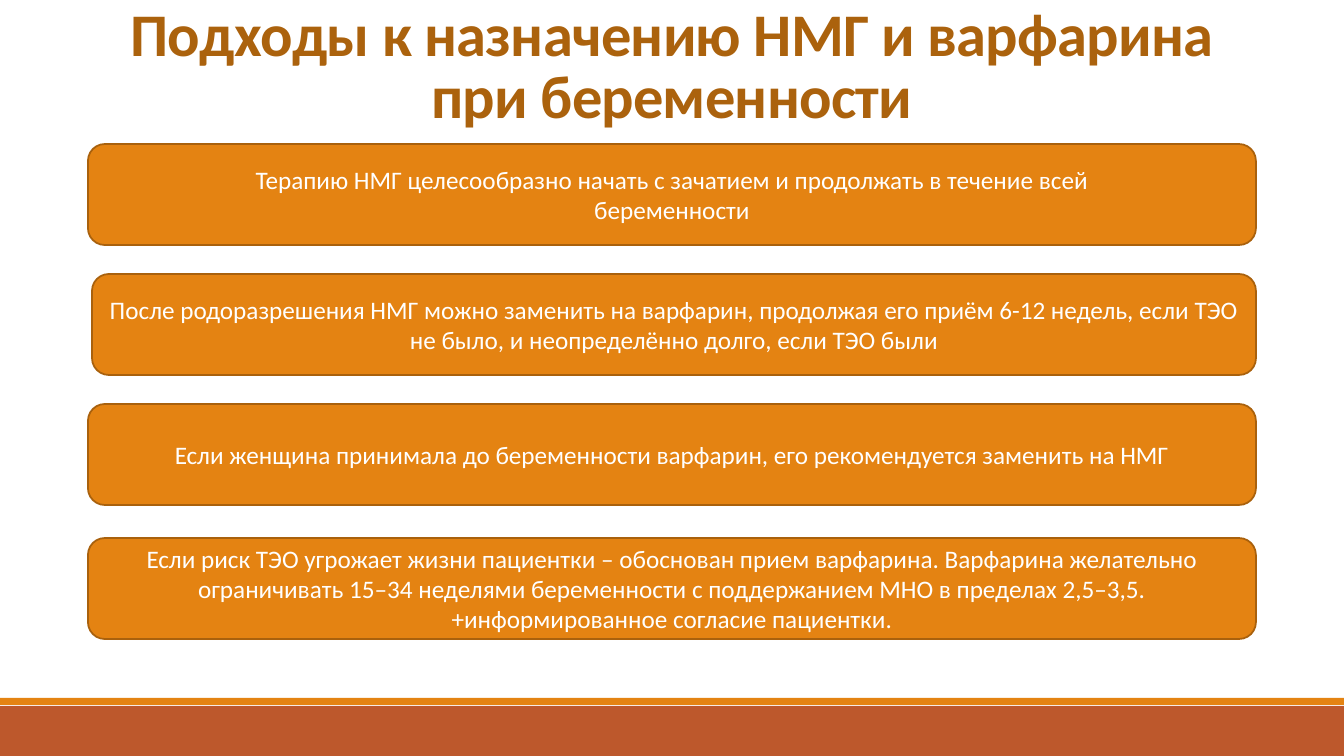
from dataclasses import dataclass

from pptx import Presentation
from pptx.dml.color import RGBColor
from pptx.enum.shapes import MSO_SHAPE
from pptx.enum.text import MSO_ANCHOR, PP_ALIGN
from pptx.util import Pt

RECT, ROUND = MSO_SHAPE.RECTANGLE, MSO_SHAPE.ROUNDED_RECTANGLE
MIDDLE, BOTTOM = MSO_ANCHOR.MIDDLE, MSO_ANCHOR.BOTTOM
CENTER = PP_ALIGN.CENTER

TITLE = "Подходы к назначению НМГ и варфарина при беременности"

# left, top, paragraphs
CARDS = [
    (88, 144, ["Терапию НМГ целесообразно начать с зачатием и продолжать в течение всей",
               "беременности"]),
    (92, 274, ["После родоразрешения НМГ можно заменить на варфарин, продолжая его приём "
               "6-12 недель, если ТЭО не было, и неопределённо долго, если ТЭО были"]),
    (88, 404, ["Если женщина принимала до беременности варфарин, его рекомендуется "
               "заменить на НМГ"]),
    (88, 538, ["Если риск ТЭО угрожает жизни пациентки – обоснован прием варфарина. "
               "Варфарина желательно ограничивать 15–34 неделями беременности с "
               "поддержанием МНО в пределах 2,5–3,5. +информированное согласие пациентки."]),
]

WIDE, HIGH = 1344, 756
RIGHT, CARD_H = 1256, 101
BAND_TOP, STRIP_TOP, STRIP_H = 706, 698, 7


@dataclass(frozen=True)
class Theme:
    font: str = "Calibri"
    title: str = "AB620D"
    text: str = "FFFFFF"
    card: str = "E48312"
    edge: str = "A9610D"
    band: str = "BD582C"
    title_pt: float = 43.2
    text_pt: float = 18
    edge_pt: float = 1.25


THEME = Theme()


def px(*vals):
    """Turn pixels into EMU at 100.8 px to the inch."""
    return [round(v * 914400 / 100.8) for v in vals]


def write(shape, lines, size, color, bold=False, anchor=MIDDLE, lead=None, track=None):
    frame = shape.text_frame
    frame.word_wrap = True
    frame.vertical_anchor = anchor
    for i, line in enumerate(lines):
        para = frame.add_paragraph() if i else frame.paragraphs[0]
        para.alignment = CENTER
        if lead:
            para.line_spacing = lead
        run = para.add_run()
        run.text = line
        font = run.font
        font.name, font.size, font.bold = THEME.font, Pt(size), bold
        font.color.rgb = RGBColor.from_string(color)
        if track:
            run._r.get_or_add_rPr().set("spc", str(round(track * 100)))


def block(slide, kind, box, fill, edge=None):
    shape = slide.shapes.add_shape(kind, *px(*box))
    shape.shadow.inherit = False
    shape.fill.solid()
    shape.fill.fore_color.rgb = RGBColor.from_string(fill)
    if edge:
        shape.line.color.rgb = RGBColor.from_string(edge)
        shape.line.width = Pt(THEME.edge_pt)
    else:
        shape.line.fill.background()
    return shape


def main():
    deck = Presentation()
    deck.slide_width, deck.slide_height = px(WIDE, HIGH)
    slide = deck.slides.add_slide(deck.slide_layouts[6])

    block(slide, RECT, (0, BAND_TOP, WIDE, HIGH - BAND_TOP), THEME.band)
    block(slide, RECT, (0, STRIP_TOP, WIDE, STRIP_H), THEME.card)

    head = slide.shapes.add_textbox(*px(92, -10, 1160, 146))
    write(head, [TITLE], THEME.title_pt, THEME.title, bold=True,
          anchor=BOTTOM, lead=0.85, track=-0.5)

    for left, top, lines in CARDS:
        card = block(slide, ROUND, (left, top, RIGHT - left, CARD_H),
                     THEME.card, THEME.edge)
        write(card, lines, THEME.text_pt, THEME.text)

    deck.save("out.pptx")


if __name__ == "__main__":
    main()
